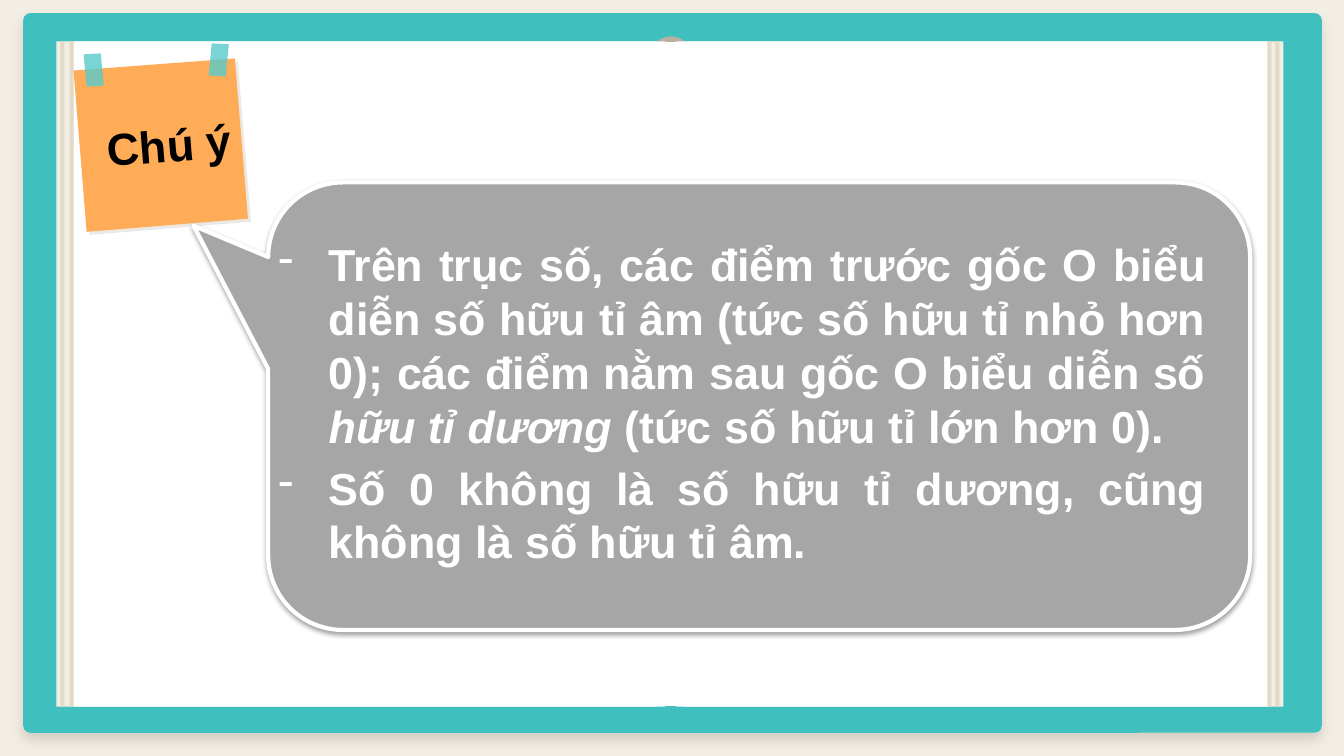
from lxml.etree import SubElement
from pptx import Presentation
from pptx.dml.color import RGBColor
from pptx.enum.shapes import MSO_SHAPE
from pptx.enum.text import MSO_ANCHOR, MSO_AUTO_SIZE, PP_ALIGN
from pptx.oxml.ns import qn
from pptx.util import Inches, Pt

CREAM = RGBColor(0xF3, 0xEE, 0xE3)
PAPER_EDGE = RGBColor(0xF2, 0xEE, 0xE3)
PAPER_STRIPE = RGBColor(0xE2, 0xDA, 0xC7)
TEAL = RGBColor(0x40, 0xBF, 0xBF)
TAPE = RGBColor(0x58, 0xCB, 0xCA)
TAUPE = RGBColor(0xB8, 0xB1, 0xA1)
SHADE = RGBColor(0x91, 0x8C, 0x7F)
ORANGE = RGBColor(0xFF, 0xAC, 0x58)
GREY = RGBColor(0xA6, 0xA6, 0xA6)
WHITE = RGBColor(0xFF, 0xFF, 0xFF)
BLACK = RGBColor(0, 0, 0)

SHEET_TOP, SHEET_HEIGHT = 0.41, 6.6
NOTE_CORNERS = [(2.33, 0.58), (0.73, 0.7), (0.86, 2.3), (2.46, 2.17)]
TAPES = [
    [(2.1, 0.43), (2.07, 0.75), (2.24, 0.76), (2.27, 0.44)],
    [(1, 0.53), (0.83, 0.54), (0.86, 0.86), (1.03, 0.85)],
]
REMARKS = [
    [
        ("Trên trục số, các điểm trước gốc O biểu diễn số hữu tỉ âm "
         "(tức số hữu tỉ nhỏ hơn 0); các điểm nằm sau gốc O biểu diễn số ", False),
        ("hữu tỉ dương ", True),
        ("(tức số hữu tỉ lớn hơn 0).", False),
    ],
    [("Số 0 không là số hữu tỉ dương, cũng không là số hữu tỉ âm.", False)],
]


def set_alpha(color_element, percent):
    SubElement(color_element, qn("a:alpha")).set("val", str(percent * 1000))


def paint(shape, color, opacity=100, line=None, line_width=0):
    shape.shadow.inherit = False
    shape.fill.solid()
    shape.fill.fore_color.rgb = color
    if opacity < 100:
        set_alpha(shape.element.spPr.find(".//" + qn("a:srgbClr")), opacity)
    if line is None:
        shape.line.fill.background()
    else:
        shape.line.color.rgb = line
        shape.line.width = Pt(line_width)


def add_block(page, kind, left, top, width, height, color, **style):
    shape = page.shapes.add_shape(
        kind, Inches(left), Inches(top), Inches(width), Inches(height))
    paint(shape, color, **style)
    return shape


def add_outline(page, corners, color, opacity=100):
    points = [(Inches(x), Inches(y)) for x, y in corners]
    builder = page.shapes.build_freeform(*points[0])
    builder.add_line_segments(points[1:], close=True)
    paint(builder.convert_to_shape(), color, opacity)


def cast_shadow(shape, color, opacity, blur, distance):
    effects = shape.element.spPr.find(qn("a:effectLst"))
    shadow = SubElement(effects, qn("a:outerShdw"), blurRad=str(Pt(blur)),
                        dist=str(Pt(distance)), dir="5400000", algn="t", rotWithShape="0")
    tint = SubElement(shadow, qn("a:srgbClr"), val=str(color))
    set_alpha(tint, opacity)


def add_span(para, text, color, italic=False):
    span = para.add_run()
    span.text = text
    span.font.name = "Arial"
    span.font.size = Pt(32)
    span.font.bold = True
    span.font.italic = italic
    span.font.color.rgb = color


def place_text(page, box, left, top, width, height):
    box.left, box.top = Inches(left), Inches(top)
    box.width, box.height = Inches(width), Inches(height)
    page.shapes.element.append(box.element)
    frame = box.text_frame
    frame.word_wrap = True
    frame.auto_size = MSO_AUTO_SIZE.NONE
    frame.vertical_anchor = MSO_ANCHOR.TOP
    return frame


def add_dash(para):
    properties = para._p.get_or_add_pPr()
    properties.set("marL", str(Inches(0.5)))
    properties.set("indent", str(-Inches(0.5)))
    SubElement(properties, qn("a:buFontTx"))
    SubElement(properties, qn("a:buChar"), char="-")


def draw_notebook(page):
    cover = add_block(page, MSO_SHAPE.ROUNDED_RECTANGLE, 0.23, 0.13, 12.88, 7.14, TEAL)
    cover.adjustments[0] = 0.01
    cast_shadow(cover, SHADE, 32, 7.9, 5.2)
    add_block(page, MSO_SHAPE.RECTANGLE, 6.27, 0.13, 0.79, 7.14, TEAL)
    add_block(page, MSO_SHAPE.OVAL, 6.45, 0.36, 0.41, 0.41, TAUPE)
    sheets = [(0.56, 5.96, PAPER_EDGE), (6.79, 5.94, PAPER_EDGE),
              (0.73, 5.87, WHITE), (6.71, 5.87, WHITE)]
    stripes = [(left, 0.04, PAPER_STRIPE) for left in (0.6, 0.69, 12.57, 12.65)]
    for left, width, color in sheets + stripes:
        add_block(page, MSO_SHAPE.RECTANGLE, left, SHEET_TOP, width, SHEET_HEIGHT, color)
    add_block(page, MSO_SHAPE.RECTANGLE, 5.83, 0.43, 1.71, 6.56, WHITE,
              line=WHITE, line_width=2)


def draw_sticky_note(page):
    add_outline(page, [(x + 0.03, y + 0.03) for x, y in NOTE_CORNERS], SHADE, 19)
    add_outline(page, NOTE_CORNERS, ORANGE)
    for corners in TAPES:
        add_outline(page, corners, TAPE, 80)


def write_title(page):
    title = page.shapes.title
    frame = place_text(page, title, 0.96, 1.11, 1.49, 0.64)
    title.rotation = 355.4
    para = frame.paragraphs[0]
    para.alignment = PP_ALIGN.LEFT
    add_span(para, "Chú ý", BLACK)


def draw_callout(page):
    callout = add_block(page, MSO_SHAPE.ROUNDED_RECTANGULAR_CALLOUT,
                        2.66, 1.81, 9.74, 4.44, GREY, line=WHITE, line_width=3)
    for index, value in enumerate((-0.576, -0.403, 0.167)):
        callout.adjustments[index] = value
    cast_shadow(callout, BLACK, 38, 3.1, 1.6)


def write_remarks(page):
    body = page.placeholders[1]
    frame = place_text(page, body, 2.66, 2.3, 9.41, 3.42)
    for index, remark in enumerate(REMARKS):
        para = frame.add_paragraph() if index else frame.paragraphs[0]
        para.alignment = PP_ALIGN.JUSTIFY
        para.space_before = Pt(0)
        para.space_after = Pt(6)
        add_dash(para)
        for text, italic in remark:
            add_span(para, text, WHITE, italic)


def main():
    deck = Presentation()
    deck.slide_width, deck.slide_height = Inches(13.33), Inches(7.5)
    page = deck.slides.add_slide(deck.slide_layouts[1])
    page.background.fill.solid()
    page.background.fill.fore_color.rgb = CREAM
    draw_notebook(page)
    draw_sticky_note(page)
    write_title(page)
    draw_callout(page)
    write_remarks(page)
    deck.save("out.pptx")


if __name__ == "__main__":
    main()
